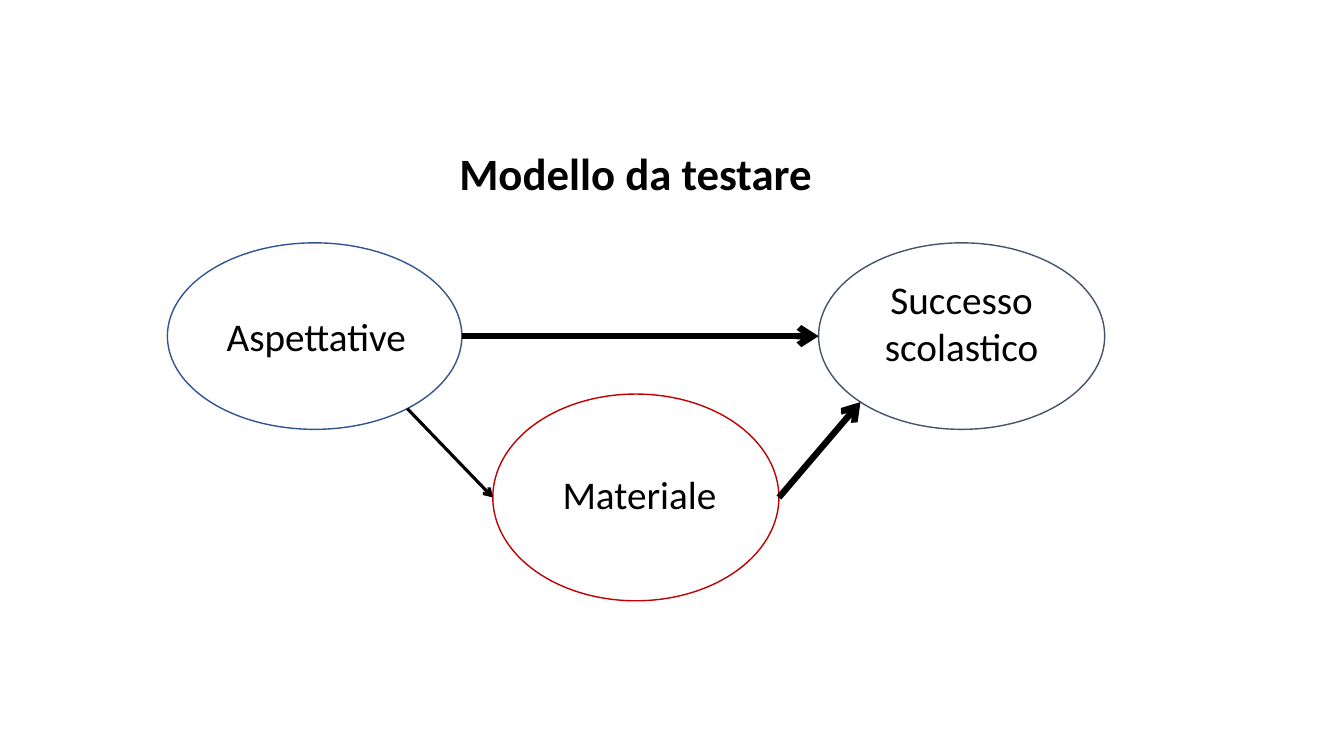
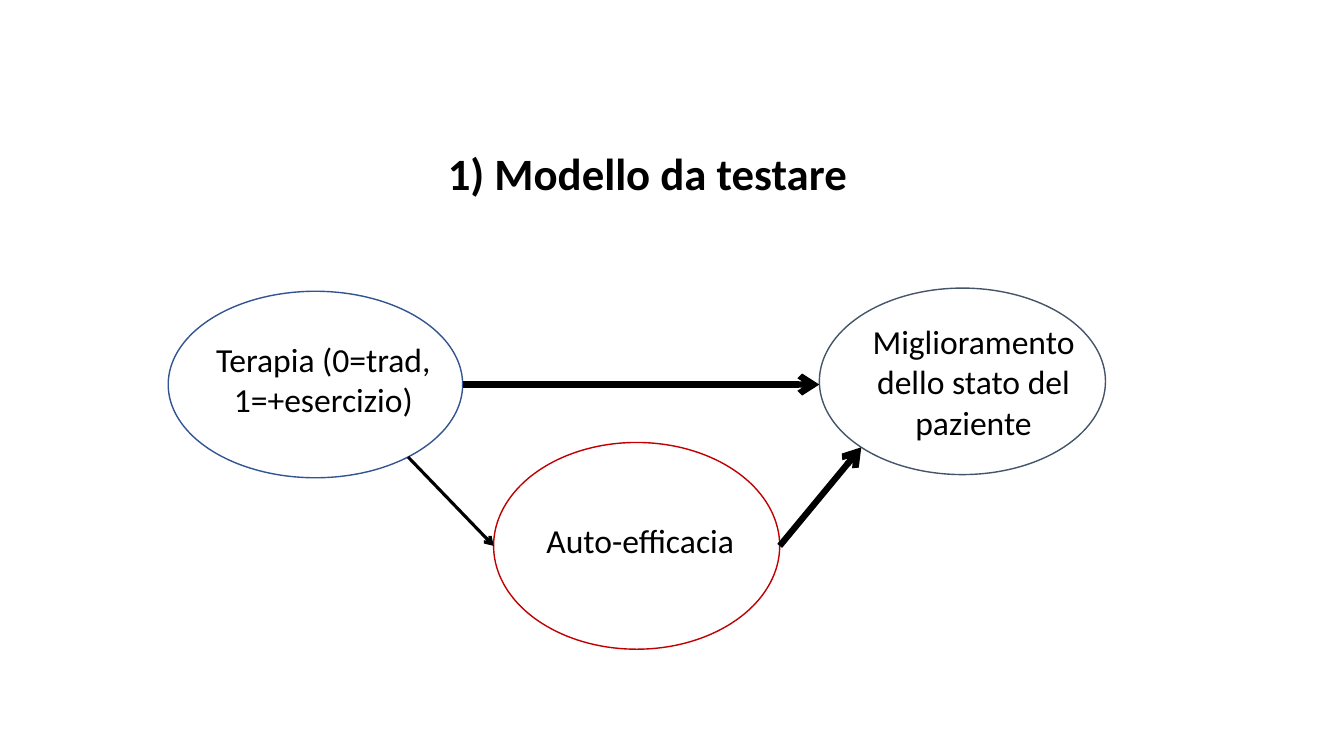
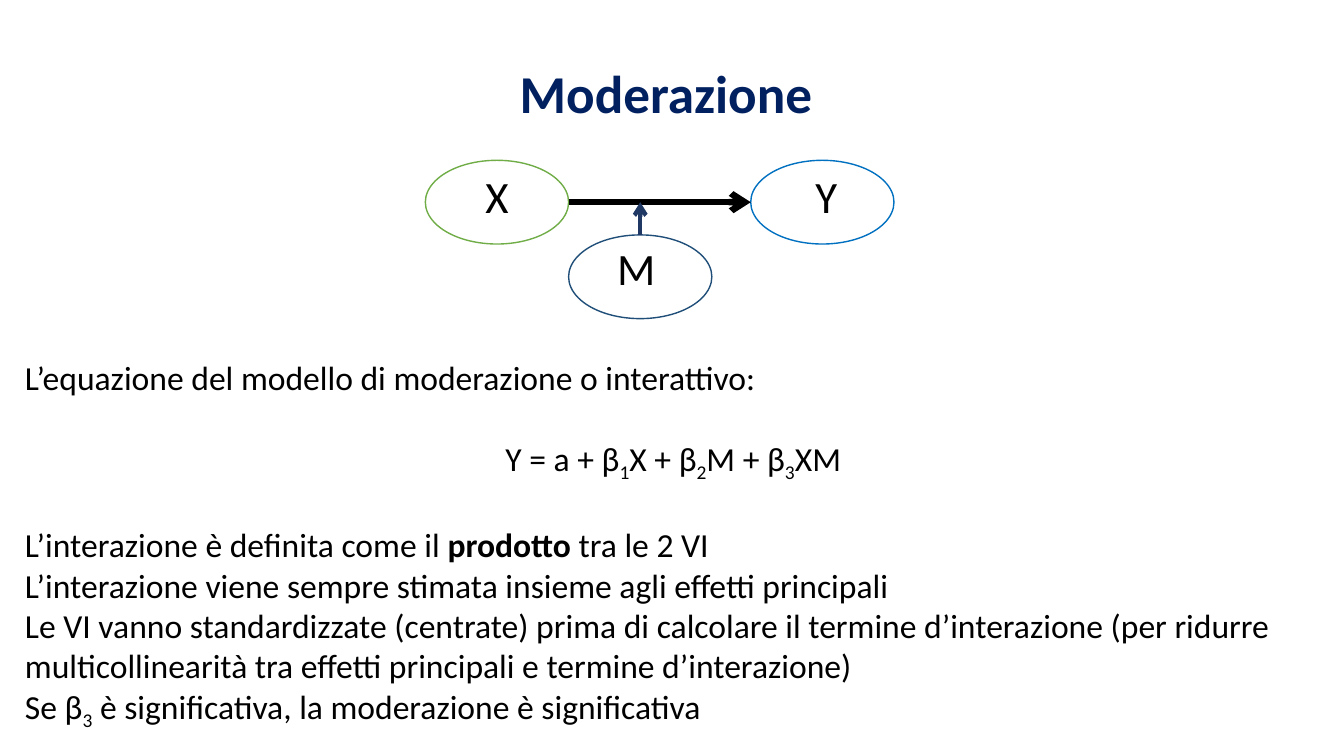
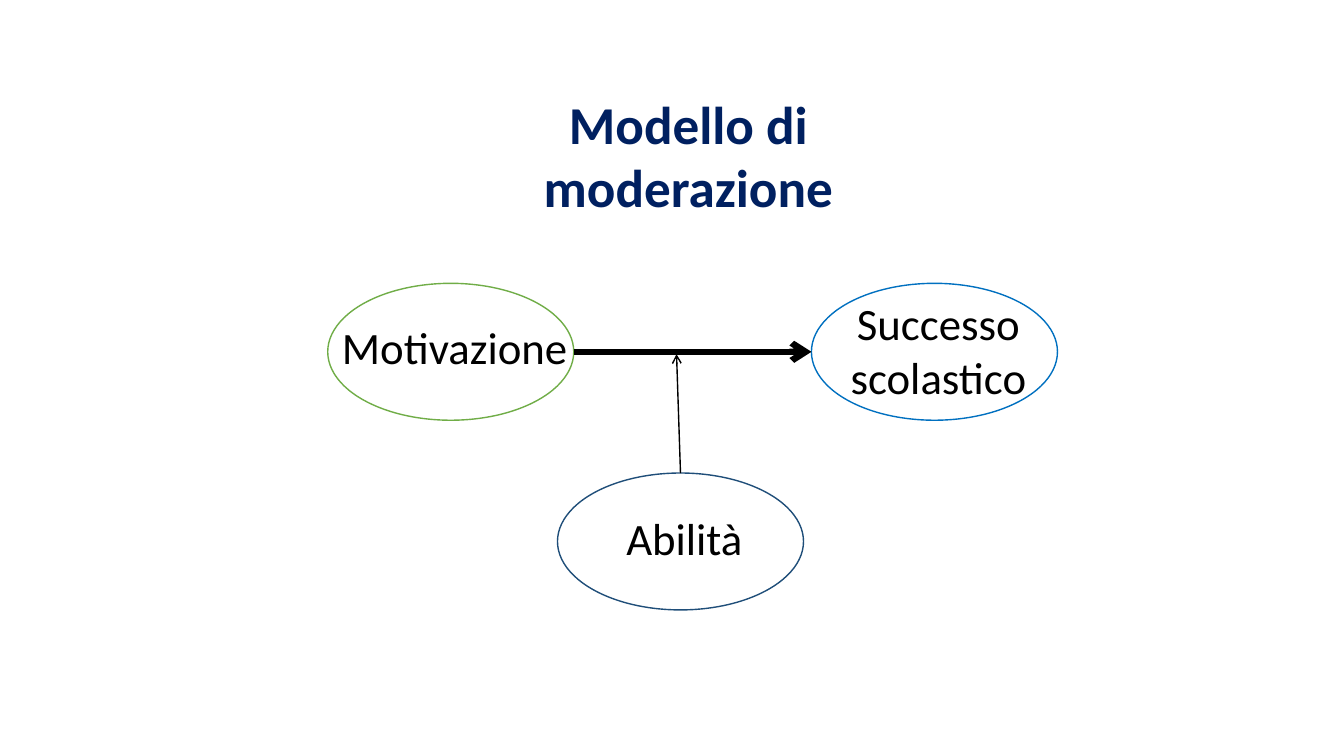
"""Build four slides on mediation and moderation models."""
from math import cos, radians, sin

from lxml.etree import SubElement
from pptx import Presentation
from pptx.dml.color import RGBColor
from pptx.enum.shapes import MSO_CONNECTOR as Connector, MSO_SHAPE as Shape
from pptx.enum.text import MSO_ANCHOR as Anchor, MSO_AUTO_SIZE as AutoSize, PP_ALIGN as Align
from pptx.oxml.ns import qn
from pptx.util import Cm, Pt

FONT = "Calibri"
BLACK = RGBColor(0x00, 0x00, 0x00)
WHITE = RGBColor(0xFF, 0xFF, 0xFF)
NAVY = RGBColor(0x00, 0x20, 0x60)
BLUE = RGBColor(0x32, 0x54, 0x91)
RED = RGBColor(0xC0, 0x00, 0x00)
SLATE = RGBColor(0x44, 0x54, 0x6A)
GREEN = RGBColor(0x70, 0xAD, 0x47)
SKY = RGBColor(0x00, 0x70, 0xC0)
DEEP_BLUE = RGBColor(0x1F, 0x4E, 0x79)
DARK_BLUE = RGBColor(0x20, 0x38, 0x64)

TITLE_ONLY, TITLE_AND_BODY = 5, 1
SLIDE_WIDTH, SLIDE_HEIGHT = 33.87, 19.05


def write(paragraph, text, size=24, color=BLACK, bold=False, align=Align.CENTER, subscript=False):
    """Append one formatted run to a paragraph."""
    paragraph.alignment = align
    run = paragraph.add_run()
    run.text = text
    font = run.font
    font.name, font.size, font.bold = FONT, Pt(size), bold
    font.color.rgb = color
    if subscript:
        run._r.get_or_add_rPr().set("baseline", "-25000")


def place(shape, box):
    """Move a shape to a box in centimetres."""
    shape.left, shape.top, shape.width, shape.height = map(Cm, box)


def prepare_frame(shape, anchor):
    """Set wrapping and anchoring, and return the text frame."""
    frame = shape.text_frame
    frame.word_wrap = True
    frame.auto_size = AutoSize.NONE
    frame.vertical_anchor = anchor
    frame.margin_left = frame.margin_right = Cm(0.25)
    frame.margin_top = frame.margin_bottom = Cm(0.13)
    return frame


def add_slide(presentation, layout, title, box, **style):
    """Add a slide with its title placed in the given box."""
    slide = presentation.slides.add_slide(presentation.slide_layouts[layout])
    place(slide.shapes.title, box)
    frame = prepare_frame(slide.shapes.title, Anchor.TOP)
    write(frame.paragraphs[0], title, bold=True, **style)
    return slide


def rim(box, angle):
    """Return the point on an ellipse at a clockwise angle from its right end."""
    left, top, width, height = box
    turn = radians(angle)
    return left + width / 2 * (1 + cos(turn)), top + height / 2 * (1 + sin(turn))


def add_arrow(slide, start, end, width, color=BLACK):
    """Draw a straight arrow between two points."""
    connector = slide.shapes.add_connector(Connector.STRAIGHT, *map(Cm, start + end))
    connector.line.width = Pt(width)
    connector.line.color.rgb = color
    SubElement(connector.line._get_or_add_ln(), qn("a:tailEnd"), type="arrow")
    SubElement(connector._element.spPr, qn("a:effectLst"))


def add_node(slide, box, color, label, size, fill=None):
    """Draw an ellipse and its label, shifted from the ellipse centre."""
    ellipse = slide.shapes.add_shape(Shape.OVAL, *map(Cm, box))
    ellipse.shadow.inherit = False
    ellipse.line.color.rgb = color
    ellipse.line.width = Pt(1)
    if fill is None:
        ellipse.fill.background()
    else:
        ellipse.fill.solid()
        ellipse.fill.fore_color.rgb = fill
    text, shift_x, shift_y, label_width, label_height = label
    left, top, width, height = box
    label_box = (left + (width - label_width) / 2 + shift_x,
                 top + (height - label_height) / 2 + shift_y, label_width, label_height)
    text_box = slide.shapes.add_textbox(*map(Cm, label_box))
    write(prepare_frame(text_box, Anchor.MIDDLE).paragraphs[0], text, size=size)


def add_mediation(slide, left, top, labels, size, outcome_shift=0):
    """Draw cause, mediator and outcome with their three arrows."""
    cause = (left, top, 7.42, 4.7)
    mediator = (left + 8.2, top + 3.81, 7.21, 5.21)
    outcome = (left + 16.41, top + outcome_shift, 7.21, 4.7)
    for box, color, label in zip((cause, mediator, outcome), (BLUE, RED, SLATE), labels):
        add_node(slide, box, color, label, size)
    start = rim(cause, 0)
    add_arrow(slide, start, (outcome[0], start[1]), 4.5)
    add_arrow(slide, rim(mediator, 0), rim(outcome, 135), 4.5)
    add_arrow(slide, rim(cause, 51), rim(mediator, 180), 2.25)


def add_moderation(slide, left, top, node_size, outcome_x, moderator_offset, labels,
                   arrow_width, arrow_color=BLACK, lean=0, gap=0):
    """Draw predictor, outcome and a moderator pointing at the arrow between them."""
    predictor = (left, top, *node_size)
    outcome = (left + outcome_x, top, *node_size)
    moderator = (left + moderator_offset[0], top + moderator_offset[1], *node_size)
    for box, color, label in zip((predictor, outcome, moderator), (GREEN, SKY, DEEP_BLUE), labels):
        add_node(slide, box, color, label, 32, fill=WHITE)
    start = rim(predictor, 0)
    add_arrow(slide, start, rim(outcome, 180), 4.5)
    peak = rim(moderator, 270)
    add_arrow(slide, peak, (peak[0] + lean, start[1] + gap), arrow_width, arrow_color)


def add_explanation(slide, box):
    """Fill the body placeholder with the equation and its reading."""
    normal, bold, subscript = {}, {"bold": True}, {"subscript": True}
    formula = [("Y = a + β", normal), ("1", subscript), ("X + β", normal), ("2", subscript),
               ("M + β", normal), ("3", subscript), ("XM", normal)]
    lines = [
        [("L’equazione del modello di moderazione o interattivo:", normal)],
        formula,
        [("L’interazione è definita come il ", normal), ("prodotto ", bold),
         ("tra le 2 VI", normal)],
        [("L’interazione viene sempre stimata insieme agli effetti principali", normal)],
        [("Le VI vanno standardizzate (centrate) prima di calcolare il termine d’interazione "
          "(per ridurre multicollinearità tra effetti principali e termine d’interazione)",
          normal)],
        [("Se β", normal), ("3", subscript),
         (" è significativa, la moderazione è significativa", normal)],
    ]
    body = slide.placeholders[1]
    place(body, box)
    frame = prepare_frame(body, Anchor.TOP)
    for index, runs in enumerate(lines):
        paragraph = frame.add_paragraph() if index else frame.paragraphs[0]
        properties = paragraph._p.get_or_add_pPr()
        properties.set("marL", "0")
        properties.set("indent", "0")
        SubElement(properties, qn("a:buNone"))
        is_formula = runs is formula
        paragraph.space_before = paragraph.space_after = Pt(29 if is_formula else 0)
        for text, style in runs:
            write(paragraph, text, align=Align.CENTER if is_formula else Align.LEFT, **style)


def main():
    """Build the presentation and save it."""
    presentation = Presentation()
    presentation.slide_width, presentation.slide_height = Cm(SLIDE_WIDTH), Cm(SLIDE_HEIGHT)

    slide = add_slide(presentation, TITLE_ONLY, "Modello da testare",
                      (9.02, 3.53, 14, 1.63), size=32)
    add_mediation(slide, 4.22, 6.12, [
        ("Aspettative", 0.04, 0, 6.32, 1.45),
        ("Materiale", 0.09, -0.08, 6.99, 1.45),
        ("Successo scolastico", 0, -0.34, 4.8, 2.64),
    ], size=28)

    slide = add_slide(presentation, TITLE_ONLY, "1) Modello da testare",
                      (9.32, 3.53, 14, 1.63), size=32)
    add_mediation(slide, 4.24, 7.34, [
        ("Terapia (0=trad, 1=+esercizio)", 0.2, -0.13, 7.82, 2.31),
        ("Auto-efficacia", 0.09, -0.14, 6.99, 1.27),
        ("Miglioramento dello stato del paziente", 0.28, 0, 6.81, 3.33),
    ], size=24, outcome_shift=-0.08)

    slide = add_slide(presentation, TITLE_AND_BODY, "Moderazione",
                      (0, 1.4, 33.57, 1.88), size=38, color=NAVY)
    add_moderation(slide, 10.72, 4.04, (3.61, 2.11), 8.2, (3.61, 1.88), [
        ("X", 0, -0.17, 2.39, 1.63),
        ("Y", 0.1, -0.17, 3.4, 1.63),
        ("M", -0.1, -0.24, 3.4, 1.63),
    ], arrow_width=3, arrow_color=DARK_BLUE)
    add_explanation(slide, (0.38, 8.86, 33.17, 9.5))

    slide = add_slide(presentation, TITLE_ONLY, "Modello di moderazione",
                      (12.35, 2.16, 10, 3.5), size=38, color=NAVY)
    add_moderation(slide, 8.26, 7.14, (6.2, 3.45), 12.19, (5.79, 4.78), [
        ("Motivazione", 0.1, -0.13, 6.4, 1.63),
        ("Successo scolastico", 0.1, -0.05, 6.4, 3),
        ("Abilità", 0.1, -0.1, 6.4, 1.63),
    ], arrow_width=1, lean=-0.1, gap=0.06)

    presentation.save("out.pptx")


if __name__ == "__main__":
    main()
